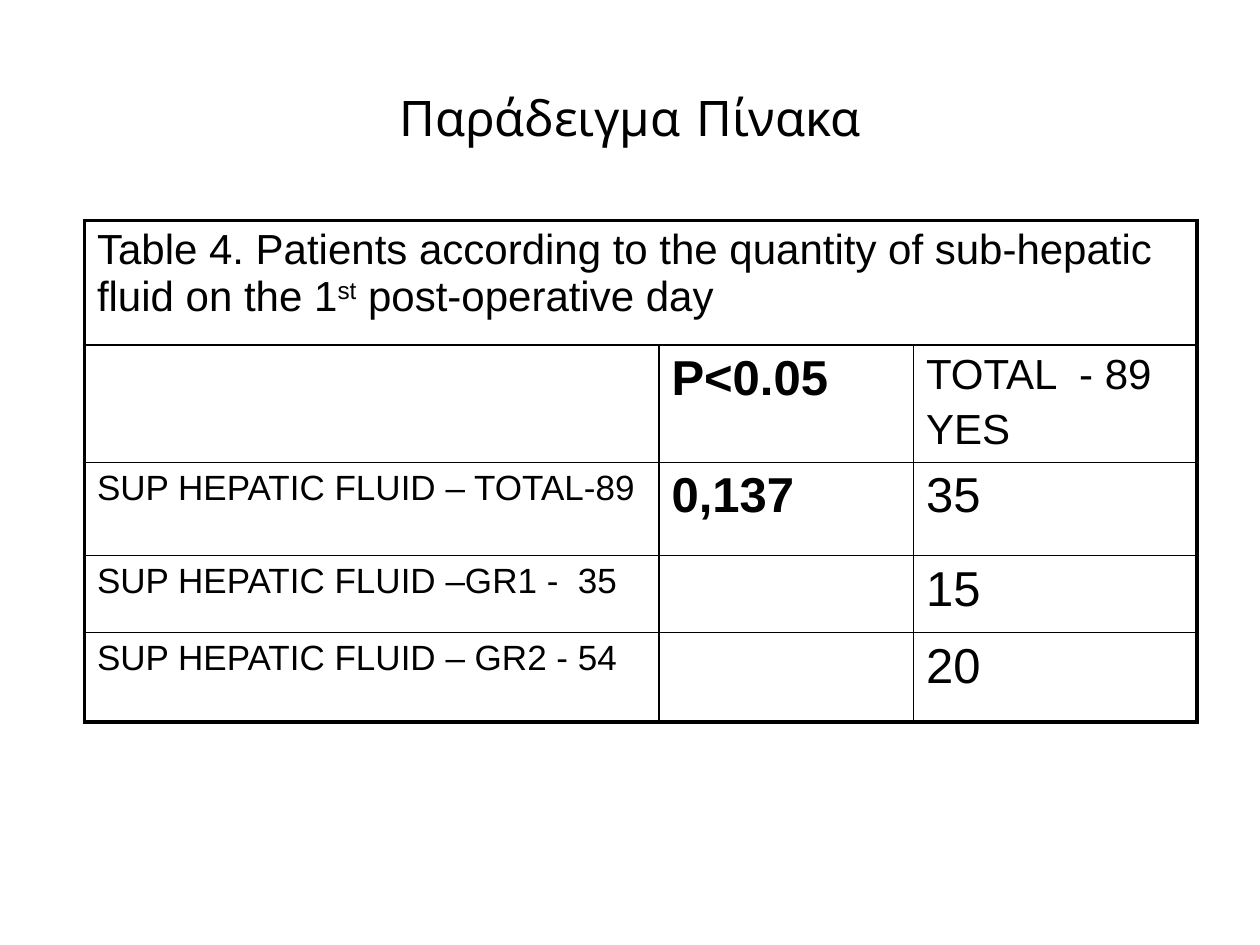
from lxml.etree import SubElement as Sub
from pptx import Presentation
from pptx.dml.color import RGBColor
from pptx.enum.text import MSO_ANCHOR as Anchor, PP_ALIGN as Align
from pptx.oxml import parse_xml
from pptx.oxml.ns import qn, nsdecls
from pptx.util import Pt

PX = 9144  # 100 px to the inch


def px(*vals):
    return [v * PX for v in vals]


def rgb(code):
    return RGBColor.from_string(code)


class Deck:
    ink = "000000"
    thin, thick = 1, 2.25

    def __init__(self, wide, high):
        self.prs = Presentation()
        self.prs.slide_width, self.prs.slide_height = px(wide, high)
        self.slide = self.prs.slides.add_slide(self.prs.slide_layouts[5])

    def run(self, para, text, size, bold=False, face="Arial", base=0):
        run = para.add_run()
        run.text = text
        font = run.font
        font.size, font.bold, font.name = Pt(size), bold, face
        font.color.rgb = rgb(self.ink)
        if base:
            font._element.set("baseline", str(base * 1000))

    def title(self, text, box):
        head = self.slide.shapes.title
        head.left, head.top, head.width, head.height = px(*box)
        frame = head.text_frame
        frame.vertical_anchor = Anchor.MIDDLE
        para = frame.paragraphs[0]
        para.alignment = Align.CENTER
        self.run(para, text, 28, face="Comic Neue")

    def fill(self, cell, paras):
        frame = cell.text_frame
        for i, runs in enumerate(paras):
            para = frame.add_paragraph() if i else frame.paragraphs[0]
            gap = Sub(para._p.get_or_add_pPr(), qn("a:spcBef"))
            Sub(gap, qn("a:spcPct")).set("val", "20000")
            for text, size, *more in runs:
                self.run(para, text, size, *more)

    def edge(self, cell, sides):
        cell.fill.background()
        props = cell._tc.get_or_add_tcPr()
        for i, (side, outer) in enumerate(sides):
            width = Pt(self.thick if outer else self.thin)
            props.insert(i, parse_xml(
                f'<a:ln{side} {nsdecls("a")} w="{width}"><a:solidFill>'
                f'<a:srgbClr val="{self.ink}"/></a:solidFill></a:ln{side}>'))

    def table(self, spot, cols, rows, data):
        box = px(*spot, sum(cols), sum(rows))
        grid = self.slide.shapes.add_table(len(rows), len(cols), *box).table
        grid.first_row = grid.horz_banding = False
        for col, wide in zip(grid.columns, cols):
            col.width = wide * PX
        for row, high in zip(grid.rows, rows):
            row.height = high * PX
        # The caption spans the whole first row
        end, last = len(cols) - 1, len(rows) - 1
        grid.cell(0, 0).merge(grid.cell(0, end))
        for r in range(len(rows)):
            for c in range(len(cols)):
                cell = grid.cell(r, c)
                right = c == end or cell.is_merge_origin
                self.edge(cell, [("L", c == 0), ("R", right),
                                 ("T", r == 0), ("B", r == last)])
                self.fill(cell, data[r][c] if c < len(data[r]) else [])


def label(text):
    return [[(text, 20)]]


def key(text):
    return [[(text, 28, True)]]


def count(text):
    return [[(text, 28)]]


def main():
    deck = Deck(1000, 750)

    # Heading
    deck.title("Παράδειγμα Πίνακα", (50, 30, 900, 125))

    # Table: cell > paragraphs > runs
    caption = [[
        ("Table 4. Patients according to the quantity of sub-hepatic "
         "fluid on the 1", 24),
        ("st", 24, False, "Arial", 30),
        (" post-operative day", 24)]]
    total = [[("TOTAL  - 89", 24)], [("YES", 24)]]
    data = [
        [caption],
        [[], key("P<0.05"), total],
        [label("SUP HEPATIC FLUID – TOTAL-89"), key("0,137"), count("35")],
        [label("SUP HEPATIC FLUID –GR1 -  35"), [], count("15")],
        [label("SUP HEPATIC FLUID – GR2 - 54"), [], count("20")],
    ]
    deck.table((67, 175), (456, 202, 225), (99, 93, 74, 61, 71), data)

    deck.prs.save("out.pptx")


if __name__ == "__main__":
    main()
